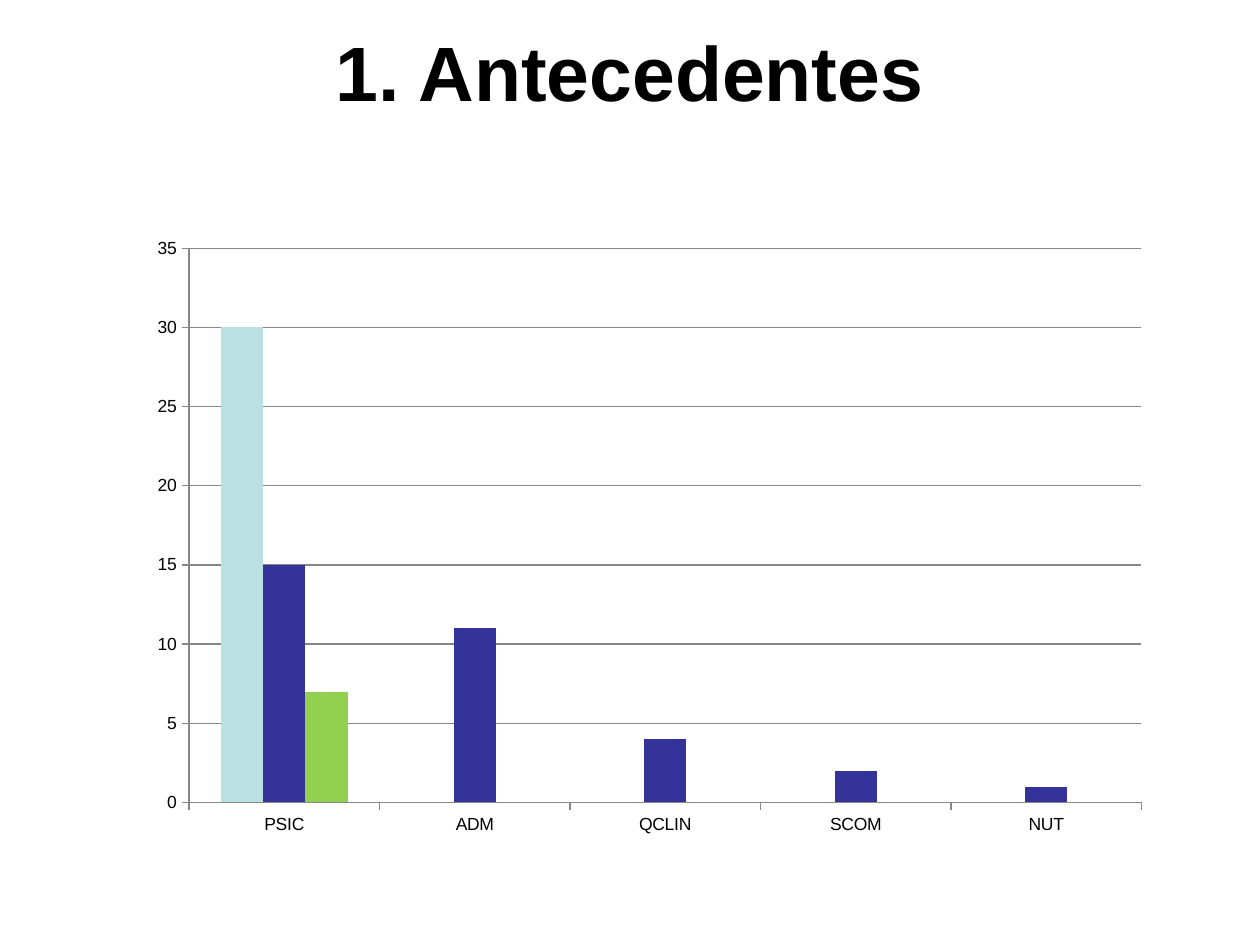
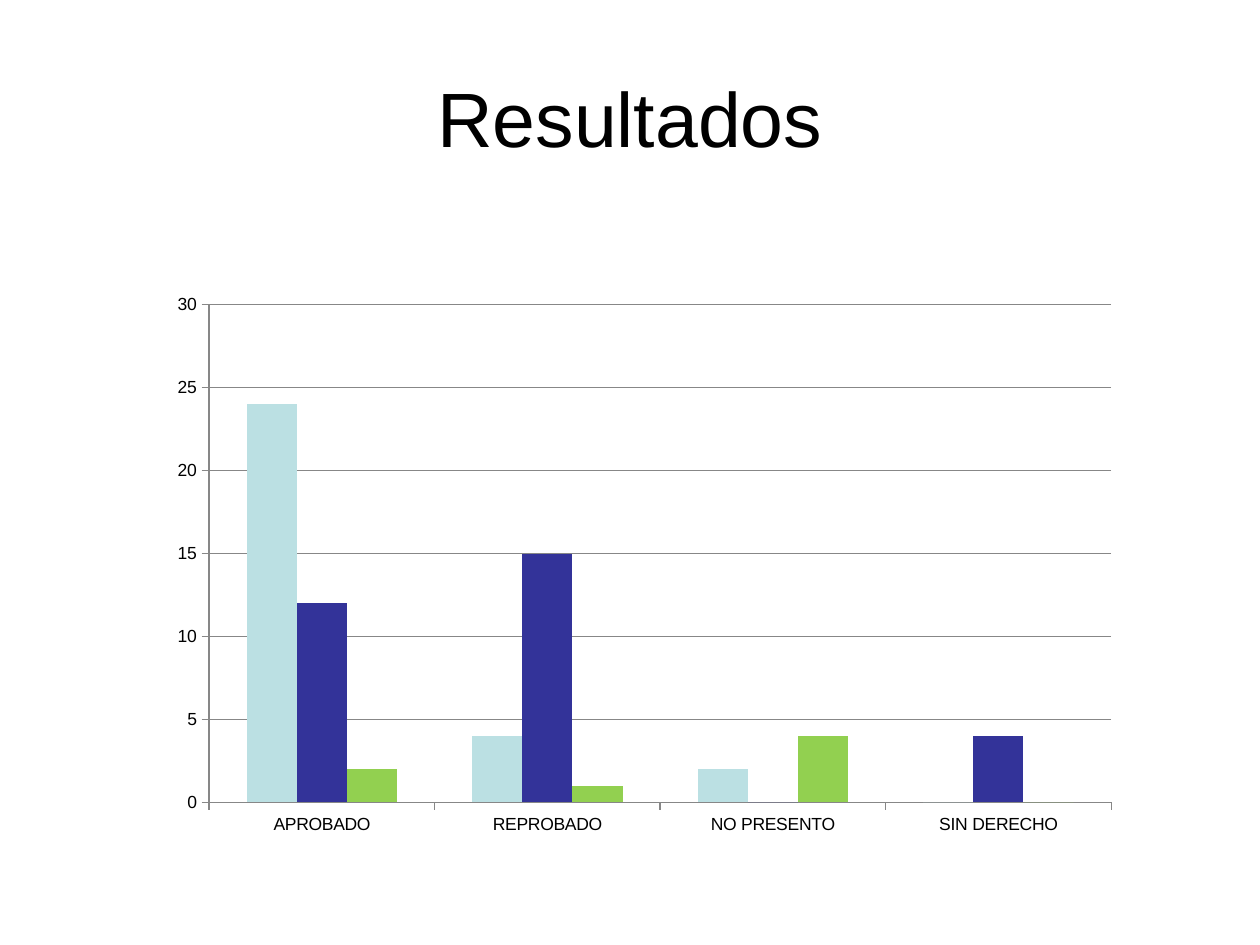
from lxml.etree import SubElement
from pptx import Presentation
from pptx.chart.data import CategoryChartData
from pptx.dml.color import RGBColor
from pptx.enum.chart import XL_CHART_TYPE as CT, XL_TICK_MARK as TICK
from pptx.enum.text import MSO_ANCHOR as ANCHOR, PP_ALIGN as ALIGN
from pptx.oxml.ns import qn
from pptx.util import Inches, Pt

FONT = "Arial"
BLACK = "000000"
AXIS_GREY = "878787"
SERIES_COLORS = ("BBE0E3", "333399", "92D050")
TITLE_BOX = (0.5, 0.3, 9, 1.25)
PLOT_INSETS = (0.41, 0.17, 0.16, 0.35)


def rgb(color):
    return RGBColor.from_string(color)


def style_font(font, size, color=BLACK, bold=False):
    font.name, font.size, font.bold = FONT, Pt(size), bold
    font.color.rgb = rgb(color)


def style_line(line, color=AXIS_GREY, width=0.75):
    line.color.rgb = rgb(color)
    line.width = Pt(width)


def write_text(tf, text, size=44, color=BLACK, bold=False, align=ALIGN.CENTER):
    p = tf.paragraphs[0]
    p.alignment = align
    r = p.add_run()
    r.text = text
    style_font(r.font, size, color, bold)


def add_title(s, box, text, bold=False, bottom_inset=0.05):
    sp = s.shapes.title
    sp.left, sp.top, sp.width, sp.height = map(Inches, box)
    tf = sp.text_frame
    tf.word_wrap = True
    tf.vertical_anchor = ANCHOR.MIDDLE
    tf.margin_bottom = Inches(bottom_inset)
    write_text(tf, text, bold=bold)


def set_plot_layout(chart, width, height):
    left, top, right, bottom = PLOT_INSETS
    area = chart._chartSpace.chart.plotArea
    for old in area.findall(qn("c:layout")):
        area.remove(old)
    layout = SubElement(area, qn("c:layout"))
    area.insert(0, layout)
    manual = SubElement(layout, qn("c:manualLayout"))
    settings = {
        "layoutTarget": "inner",
        "xMode": "edge",
        "yMode": "edge",
        "x": left / width,
        "y": top / height,
        "w": (width - left - right) / width,
        "h": (height - top - bottom) / height,
    }
    for tag, value in settings.items():
        SubElement(manual, qn(f"c:{tag}")).set("val", str(value))


def add_column_chart(s, box, categories, rows, top_value):
    data = CategoryChartData()
    data.categories = categories
    for number, values in enumerate(rows, 1):
        data.add_series(f"Series {number}", values)
    chart = s.shapes.add_chart(CT.COLUMN_CLUSTERED, *map(Inches, box), data).chart
    chart.has_legend = chart.has_title = False
    style_font(chart.font, 10)
    plot = chart.plots[0]
    plot.gap_width, plot.overlap, plot.vary_by_categories = 150, 0, False
    for series, color in zip(plot.series, SERIES_COLORS):
        series.format.fill.solid()
        series.format.fill.fore_color.rgb = rgb(color)
        series.invert_if_negative = False
    for axis in (chart.category_axis, chart.value_axis):
        axis.major_tick_mark, axis.minor_tick_mark = TICK.OUTSIDE, TICK.NONE
        style_line(axis.format.line)
    axis = chart.value_axis
    axis.minimum_scale, axis.maximum_scale, axis.major_unit = 0, top_value, 5
    axis.has_major_gridlines = True
    style_line(axis.major_gridlines.format.line)
    set_plot_layout(chart, *box[2:])


def add_slide(prs):
    return prs.slides.add_slide(prs.slide_layouts[5])


def build_background(prs):
    s = add_slide(prs)
    add_title(s, TITLE_BOX, "1. Antecedentes", bold=True, bottom_inset=0.78)
    add_column_chart(
        s, (1.09, 1.8, 8.13, 4.92),
        ("PSIC", "ADM", "QCLIN", "SCOM", "NUT"),
        ((30, None, None, None, None), (15, 11, 4, 2, 1), (7, None, None, None, None)),
        top_value=35)


def build_results(prs):
    s = add_slide(prs)
    add_title(s, TITLE_BOX, "Resultados")
    add_column_chart(
        s, (1.25, 2.25, 7.73, 4.47),
        ("APROBADO", "REPROBADO", "NO PRESENTO", "SIN DERECHO"),
        ((24, 4, 2, 0), (12, 15, 0, 4), (2, 1, 4, 0)),
        top_value=30)


def main():
    prs = Presentation()
    prs.slide_width, prs.slide_height = Inches(10), Inches(7.5)
    build_background(prs)
    build_results(prs)
    prs.save("out.pptx")


if __name__ == "__main__":
    main()
